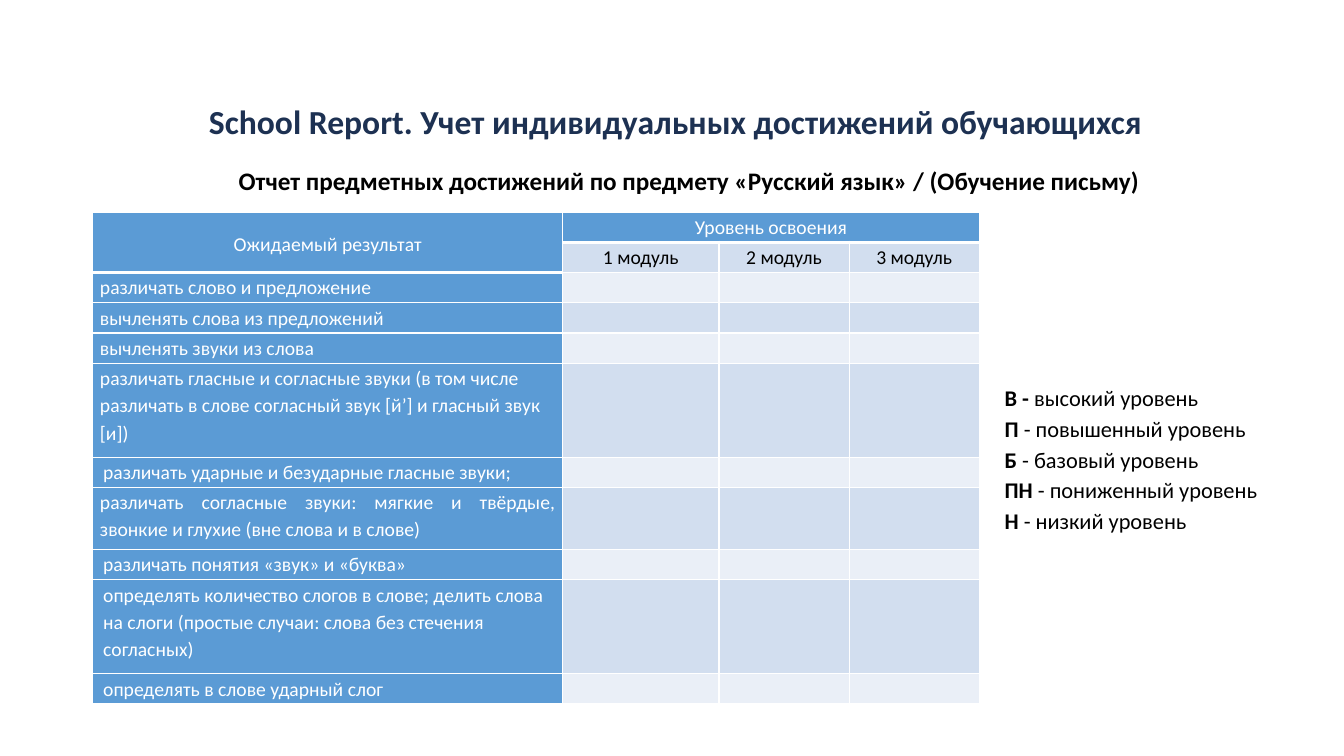
from lxml import etree
from pptx import Presentation
from pptx.dml.color import RGBColor
from pptx.enum.text import MSO_ANCHOR, PP_ALIGN
from pptx.oxml.ns import qn
from pptx.util import Cm, Pt

LEFT, MID, JUST = PP_ALIGN.LEFT, PP_ALIGN.CENTER, PP_ALIGN.JUSTIFY
TOP, CENTRE = MSO_ANCHOR.TOP, MSO_ANCHOR.MIDDLE
WHITE = RGBColor(0xFF, 0xFF, 0xFF)
BLACK = RGBColor(0, 0, 0)
NAVY = RGBColor(0x1D, 0x31, 0x52)
BLUE = RGBColor(0x5B, 0x9B, 0xD5)
PALE = RGBColor(0xEA, 0xEF, 0xF7)
TINT = RGBColor(0xD2, 0xDE, 0xEF)

INDENT = 0.08
COLS = [11.84, 3.94, 3.28, 3.28]
LINE, PAIR, TRIPLE = 0.76, 1.57, 2.37
# skill, row height, left indent, alignment
SKILLS = [
    ("различать слово и предложение", LINE, 0, LEFT),
    ("вычленять слова из предложений", LINE, 0, LEFT),
    ("вычленять звуки из слова", LINE, 0, LEFT),
    ("различать гласные и согласные звуки (в том числе различать в слове "
     "согласный звук [й’] и гласный звук [и])", TRIPLE, 0, LEFT),
    ("различать ударные и безударные гласные звуки;", LINE, INDENT, LEFT),
    ("различать согласные звуки: мягкие и твёрдые, звонкие и глухие "
     "(вне слова и в слове)", PAIR, 0, JUST),
    ("различать понятия «звук» и «буква»", LINE, INDENT, LEFT),
    ("определять количество слогов в слове; делить слова на слоги "
     "(простые случаи: слова без стечения согласных)", TRIPLE, INDENT, LEFT),
    ("определять в слове ударный слог", LINE, INDENT, LEFT),
]
LEVELS = [
    ("В -", " высокий уровень"),
    ("П ", "- повышенный уровень"),
    ("Б ", "- базовый уровень"),
    ("ПН ", "- пониженный уровень"),
    ("Н ", "- низкий уровень"),
]


def write(para, text, size=14, color=BLACK, bold=False, align=LEFT,
          space=1.0, indent=0):
    """Add one run to a paragraph and format both."""
    para.alignment = align
    para.line_spacing = space
    if indent:
        props = para._p.get_or_add_pPr()
        props.set("marL", str(Cm(indent)))
        props.set("indent", "0")
    run = para.add_run()
    run.text = text
    font = run.font
    font.name, font.size, font.bold = "Calibri", Pt(size), bold
    font.color.rgb = color


def edge(cell, low=1):
    """Draw white cell borders; low is the width of the bottom one."""
    props = cell._tc.get_or_add_tcPr()
    for side, width in zip("LRTB", (1, 1, 1, low)):
        line = etree.SubElement(props, qn(f"a:ln{side}"), w=str(Pt(width)))
        fill = etree.SubElement(line, qn("a:solidFill"))
        etree.SubElement(fill, qn("a:srgbClr"), val=str(WHITE))


class Page:
    def __init__(self, deck):
        self.slide = deck.slides.add_slide(deck.slide_layouts[5])

    def title(self, text, left, top, width, height):
        shape = self.slide.shapes.title
        shape.left, shape.top = Cm(left), Cm(top)
        shape.width, shape.height = Cm(width), Cm(height)
        frame = shape.text_frame
        frame.word_wrap = True
        frame.vertical_anchor = TOP
        write(frame.paragraphs[0], text, size=24, color=NAVY, bold=True,
              align=MID)

    def box(self, lines, left, top, width, height, **style):
        """Add a text box; each line is a bold part and a plain part."""
        shape = self.slide.shapes.add_textbox(
            Cm(left), Cm(top), Cm(width), Cm(height))
        frame = shape.text_frame
        frame.word_wrap = True
        for i, (strong, plain) in enumerate(lines):
            para = frame.add_paragraph() if i else frame.paragraphs[0]
            write(para, strong, bold=True, **style)
            if plain:
                write(para, plain, **style)

    def cell(self, cell, text, fill, low=1, **style):
        cell.margin_left = cell.margin_right = Cm(0.18)
        cell.margin_top = cell.margin_bottom = 0
        edge(cell, low)
        cell.fill.solid()
        cell.fill.fore_color.rgb = fill
        para = cell.text_frame.paragraphs[0]
        if text:
            write(para, text, space=1.15, **style)
        else:
            etree.SubElement(para._p, qn("a:endParaRPr"), sz="1400")

    def table(self, left, top):
        highs = [LINE, LINE] + [skill[1] for skill in SKILLS]
        grid = self.slide.shapes.add_table(
            len(highs), len(COLS), Cm(left), Cm(top),
            Cm(sum(COLS)), Cm(sum(highs))).table
        for col, width in zip(grid.columns, COLS):
            col.width = Cm(width)
        for row, high in zip(grid.rows, highs):
            row.height = Cm(high)

        grid.cell(0, 0).merge(grid.cell(1, 0))
        grid.cell(0, 1).merge(grid.cell(0, 3))
        heads = ["Ожидаемый результат", "Уровень освоения", "", ""]
        for col, text in enumerate(heads):
            self.cell(grid.cell(0, col), text, BLUE, low=3, color=WHITE,
                      align=MID)
        grid.cell(0, 0).vertical_anchor = CENTRE
        self.cell(grid.cell(1, 0), "", BLUE, low=3)
        for col in range(1, 4):
            self.cell(grid.cell(1, col), f"{col} модуль", TINT, align=MID)

        for row, (text, _, indent, align) in enumerate(SKILLS, 2):
            self.cell(grid.cell(row, 0), text, BLUE, color=WHITE,
                      indent=indent, align=align)
            for col in range(1, 4):
                self.cell(grid.cell(row, col), "", TINT if row % 2 else PALE)


def main():
    deck = Presentation()
    deck.slide_width, deck.slide_height = Cm(33.87), Cm(19.05)
    page = Page(deck)
    page.title(" School Report. Учет индивидуальных достижений обучающихся",
               3.53, 2.41, 26.8, 1.28)
    page.table(2.34, 5.35)
    page.box([("Отчет предметных достижений по предмету «Русский язык» / "
               "(Обучение письму)", "")],
             2.34, 4.04, 30.05, 1.03, size=18, align=MID)
    page.box(LEVELS, 25.07, 9.45, 7.29, 4.14, size=16, space=1.15)
    deck.save("out.pptx")


if __name__ == "__main__":
    main()
